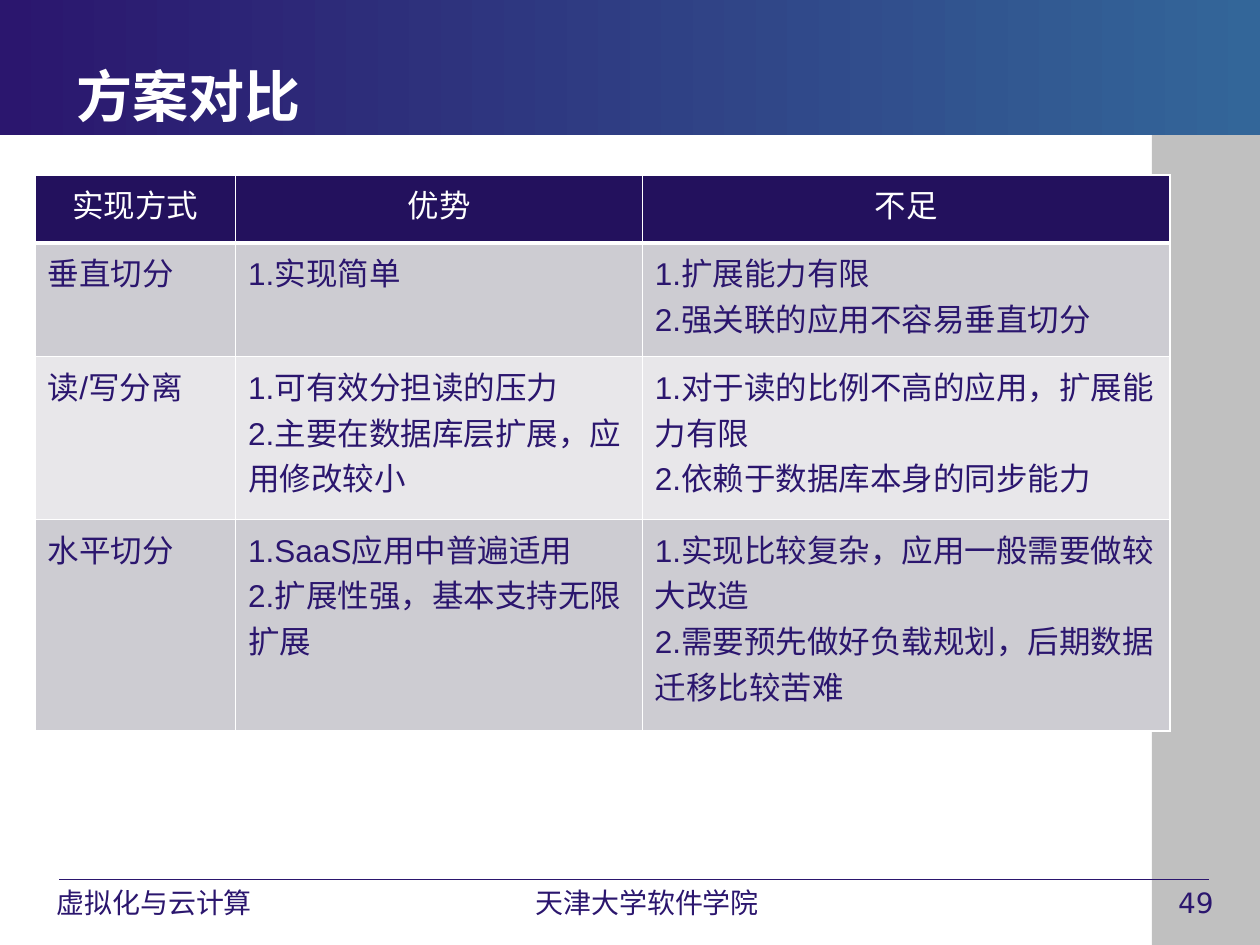
from dataclasses import dataclass

from lxml.etree import SubElement
from pptx import Presentation
from pptx.dml.color import RGBColor as Rgb
from pptx.enum.shapes import MSO_CONNECTOR as Connector, MSO_SHAPE as Shape
from pptx.enum.text import MSO_ANCHOR as Anchor, PP_ALIGN as Align
from pptx.oxml import parse_xml
from pptx.oxml.ns import nsdecls, qn
from pptx.util import Cm, Pt


@dataclass(frozen=True)
class Theme:
    ink: str = "2B166E"
    blue: str = "336699"
    white: str = "FFFFFF"
    side: str = "C0C0C0"
    header: str = "23115D"
    bands: tuple = ("CDCCD2", "E8E7EA")
    title_font: str = "DejaVu Sans"
    table_font: str = "Arial"
    title_size: int = 32
    table_size: int = 18
    footer_size: int = 16


HEADINGS = ("实现方式", "优势", "不足")
COMPARISON = (
    ("垂直切分", "1.实现简单", "1.扩展能力有限\n2.强关联的应用不容易垂直切分"),
    ("读/写分离",
     "1.可有效分担读的压力\n2.主要在数据库层扩展，应用修改较小",
     "1.对于读的比例不高的应用，扩展能力有限\n2.依赖于数据库本身的同步能力"),
    ("水平切分",
     "1.SaaS应用中普遍适用\n2.扩展性强，基本支持无限扩展",
     "1.实现比较复杂，应用一般需要做较大改造\n"
     "2.需要预先做好负载规划，后期数据迁移比较苦难"),
)
COLUMN_WIDTHS = (4.04, 8.2, 10.64)
ROW_HEIGHTS = (1.37, 2.29, 3.28, 4.27)


class SlideBuilder:
    """Draws elements on one page; all lengths are centimetres."""

    def __init__(self, page, theme):
        self.page = page
        self.theme = theme

    def style(self, frame, font, size, color, align, bold=False):
        for para in frame.paragraphs:
            para.alignment = align
            para.font.name = font
            para.font.size = Pt(size)
            para.font.bold = bold
            para.font.color.rgb = Rgb.from_string(color)

    def panel(self, left, top, width, height, start, end=None):
        """Rectangle in one colour, or a left-to-right gradient with two."""
        box = self.page.shapes.add_shape(
            Shape.RECTANGLE, Cm(left), Cm(top), Cm(width), Cm(height))
        box.shadow.inherit = False
        box.line.fill.background()
        if end is None:
            box.fill.solid()
            box.fill.fore_color.rgb = Rgb.from_string(start)
            return
        box.fill.gradient()
        box.fill.gradient_angle = 0
        for stop, color, position in zip(box.fill.gradient_stops, (start, end), (0, 1)):
            stop.color.rgb = Rgb.from_string(color)
            stop.position = position

    def rule(self, left, right, y):
        line = self.page.shapes.add_connector(
            Connector.STRAIGHT, Cm(left), Cm(y), Cm(right), Cm(y))
        line.line.color.rgb = Rgb.from_string(self.theme.ink)
        line.line.width = Pt(0.75)
        SubElement(line._element.spPr, qn("a:effectLst"))

    def text(self, text, left, top, width, height, size, color,
             align=Align.LEFT, anchor=Anchor.TOP, bold=False):
        box = self.page.shapes.add_textbox(Cm(left), Cm(top), Cm(width), Cm(height))
        frame = box.text_frame
        frame.word_wrap = True
        frame.vertical_anchor = anchor
        frame.text = text
        self.style(frame, self.theme.title_font, size, color, align, bold)

    def borders(self, cell, bottom):
        props = cell._tc.get_or_add_tcPr()
        widths = {"lnL": 1, "lnR": 1, "lnT": 1, "lnB": bottom}
        for index, (side, width) in enumerate(widths.items()):
            props.insert(index, parse_xml(
                f'<a:{side} {nsdecls("a")} w="{Pt(width)}"><a:solidFill>'
                f'<a:srgbClr val="{self.theme.white}"/></a:solidFill></a:{side}>'))

    def table(self, rows, left, top, widths, heights):
        theme = self.theme
        table = self.page.shapes.add_table(
            len(rows), len(widths), Cm(left), Cm(top),
            Cm(sum(widths)), Cm(sum(heights))).table
        for column, width in zip(table.columns, widths):
            column.width = Cm(width)
        for row, height in zip(table.rows, heights):
            row.height = Cm(height)
        for r, texts in enumerate(rows):
            if r == 0:
                fill, color, align, bottom = theme.header, theme.white, Align.CENTER, 3
            else:
                fill = theme.bands[(r - 1) % len(theme.bands)]
                color, align, bottom = theme.ink, Align.LEFT, 1
            for c, text in enumerate(texts):
                cell = table.cell(r, c)
                cell.text = text
                cell.fill.solid()
                cell.fill.fore_color.rgb = Rgb.from_string(fill)
                self.style(cell.text_frame, theme.table_font, theme.table_size,
                           color, align)
                self.borders(cell, bottom)


def main():
    theme = Theme()
    deck = Presentation()
    deck.slide_width, deck.slide_height = Cm(25.4), Cm(19.05)
    builder = SlideBuilder(deck.slides.add_slide(deck.slide_layouts[6]), theme)

    builder.panel(23.22, 2.72, 2.18, 16.33, theme.side)
    builder.rule(1.19, 24.38, 17.73)
    builder.panel(0, 0, 25.4, 2.72, theme.ink, theme.blue)

    footers = (
        ("49", 23.5, 1.8, Align.LEFT),
        ("虚拟化与云计算 ", 0.71, 4.93, Align.CENTER),
        ("天津大学软件学院", 10.19, 5.72, Align.CENTER),
    )
    for text, left, width, align in footers:
        builder.text(text, left, 17.73, width, 0.89, theme.footer_size, theme.ink, align)

    builder.text("方案对比", 1.3, 0.33, 22.86, 3.18, theme.title_size, theme.white,
                 anchor=Anchor.MIDDLE, bold=True)
    builder.table((HEADINGS, *COMPARISON), 0.71, 3.53, COLUMN_WIDTHS, ROW_HEIGHTS)
    deck.save("out.pptx")


if __name__ == "__main__":
    main()
